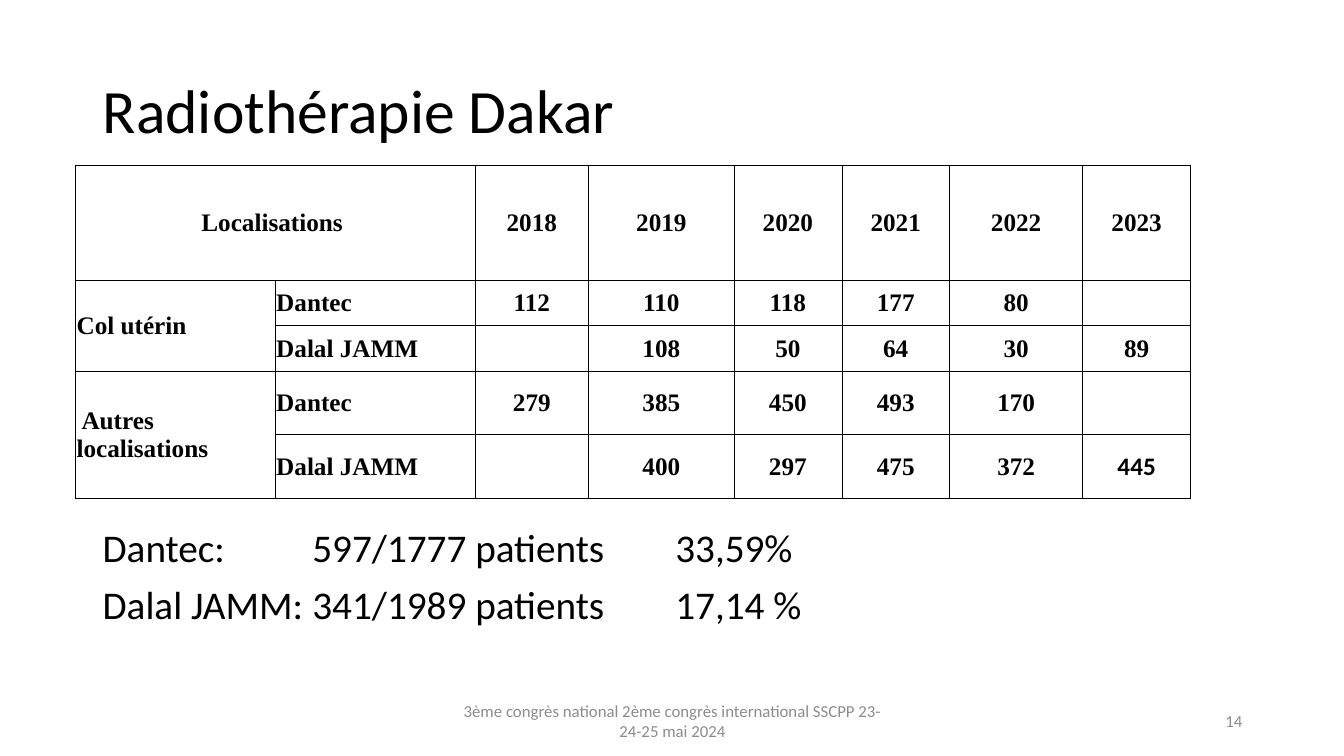
from dataclasses import dataclass

from lxml.etree import SubElement
from pptx import Presentation
from pptx.dml.color import RGBColor
from pptx.enum.text import MSO_ANCHOR, PP_ALIGN
from pptx.oxml.ns import qn
from pptx.util import Inches, Pt


@dataclass(frozen=True)
class Theme:
    ink: str = "000000"
    muted: str = "8C8C8C"
    paper: str = "FFFFFF"
    body_font: str = "Calibri"
    table_font: str = "Times New Roman"
    title_size: int = 44
    body_size: int = 28
    table_size: int = 18
    footer_size: int = 12
    border: float = 0.5


class SlideBuilder:
    def __init__(self, slide, theme):
        self.slide = slide
        self.theme = theme

    def run(self, paragraph, text, size, color, font=None, bold=False):
        run = paragraph.add_run()
        run.text = text
        run.font.size = Pt(size)
        run.font.name = font or self.theme.body_font
        run.font.bold = bold
        run.font.color.rgb = RGBColor.from_string(color)

    def text(self, box, lines, size, color, align=PP_ALIGN.LEFT,
             anchor=MSO_ANCHOR.MIDDLE, spacing=1.0, before=0, tabs=()):
        frame = self.slide.shapes.add_textbox(*map(Inches, box)).text_frame
        frame.word_wrap = True
        frame.vertical_anchor = anchor
        for index, line in enumerate(lines):
            paragraph = frame.add_paragraph() if index else frame.paragraphs[0]
            paragraph.alignment = align
            paragraph.line_spacing = spacing
            paragraph.space_before = Pt(before)
            if tabs:
                self.tab_stops(paragraph, tabs)
            self.run(paragraph, line, size, color)

    def tab_stops(self, paragraph, positions):
        stops = SubElement(paragraph._p.get_or_add_pPr(), qn("a:tabLst"))
        for position in positions:
            SubElement(stops, qn("a:tab"), pos=str(Inches(position)), algn="l")

    def borders(self, cell):
        properties = cell._tc.get_or_add_tcPr()
        for side in ("a:lnL", "a:lnR", "a:lnT", "a:lnB"):
            line = SubElement(properties, qn(side), w=str(Pt(self.theme.border)))
            fill = SubElement(line, qn("a:solidFill"))
            SubElement(fill, qn("a:srgbClr"), val=self.theme.ink)

    def cell(self, cell, text, align, font):
        self.borders(cell)
        cell.fill.solid()
        cell.fill.fore_color.rgb = RGBColor.from_string(self.theme.paper)
        cell.vertical_anchor = MSO_ANCHOR.MIDDLE
        cell.margin_left = cell.margin_right = cell.margin_top = Inches(0.01)
        cell.margin_bottom = 0
        if text:
            paragraph = cell.text_frame.paragraphs[0]
            paragraph.alignment = align
            self.run(paragraph, text, self.theme.table_size, self.theme.ink, font, True)

    def table(self, left, top, widths, heights, rows, merges, label_columns, fonts):
        """Draw rows of text; merges holds cell pairs, fonts overrides by cell."""
        table = self.slide.shapes.add_table(
            len(heights), len(widths), Inches(left), Inches(top),
            Inches(sum(widths)), Inches(sum(heights))).table
        table.first_row = table.horz_banding = False
        for column, width in zip(table.columns, widths):
            column.width = Inches(width)
        for row, height in zip(table.rows, heights):
            row.height = Inches(height)
        for r, row in enumerate(rows):
            for c, text in enumerate(row):
                is_label = r > 0 and c < label_columns
                align = PP_ALIGN.LEFT if is_label else PP_ALIGN.CENTER
                self.cell(table.cell(r, c), text, align,
                          fonts.get((r, c), self.theme.table_font))
        for first, last in merges:
            table.cell(*first).merge(table.cell(*last))


PATIENTS = [
    ["Localisations ", "", "2018", "2019", "2020", "2021", "2022", "2023"],
    ["Col utérin", "Dantec", "112", "110", "118", "177", "80", ""],
    ["", "Dalal JAMM", "", "108", "50", "64", "30", "89"],
    [" Autres localisations", "Dantec", "279", "385", "450", "493", "170", ""],
    ["", "Dalal JAMM", "", "400", "297", "475", "372", "445"],
]


def main():
    presentation = Presentation()
    presentation.slide_width = Inches(13.33)
    presentation.slide_height = Inches(7.5)
    theme = Theme()
    builder = SlideBuilder(
        presentation.slides.add_slide(presentation.slide_layouts[6]), theme)

    builder.text((0.92, 0.4, 11.5, 1.45), ["Radiothérapie Dakar"],
                 theme.title_size, theme.ink, spacing=0.9)
    builder.text((0.92, 5.2, 11.81, 1.47),
                 ["Dantec:\t597/1777 patients\t33,59%",
                  "Dalal JAMM:\t341/1989 patients\t17,14 %"],
                 theme.body_size, theme.ink, anchor=MSO_ANCHOR.TOP,
                 spacing=0.9, before=10, tabs=(2.08, 5.68))
    builder.table(
        0.75, 1.64,
        widths=[1.98, 1.98, 1.13, 1.44, 1.07, 1.07, 1.32, 1.07],
        heights=[1.14, 0.45, 0.45, 0.63, 0.63],
        rows=PATIENTS,
        merges=[((0, 0), (0, 1)), ((1, 0), (2, 0)), ((3, 0), (4, 0))],
        label_columns=2,
        fonts={(4, 7): theme.body_font})
    builder.text((9.42, 6.95, 3, 0.4), ["14"],
                 theme.footer_size, theme.muted, PP_ALIGN.RIGHT)
    builder.text((4.42, 6.95, 4.5, 0.4),
                 ["3ème congrès national 2ème congrès international SSCPP 23-24-25 mai 2024"],
                 theme.footer_size, theme.muted, PP_ALIGN.CENTER)
    presentation.save("out.pptx")


if __name__ == "__main__":
    main()
